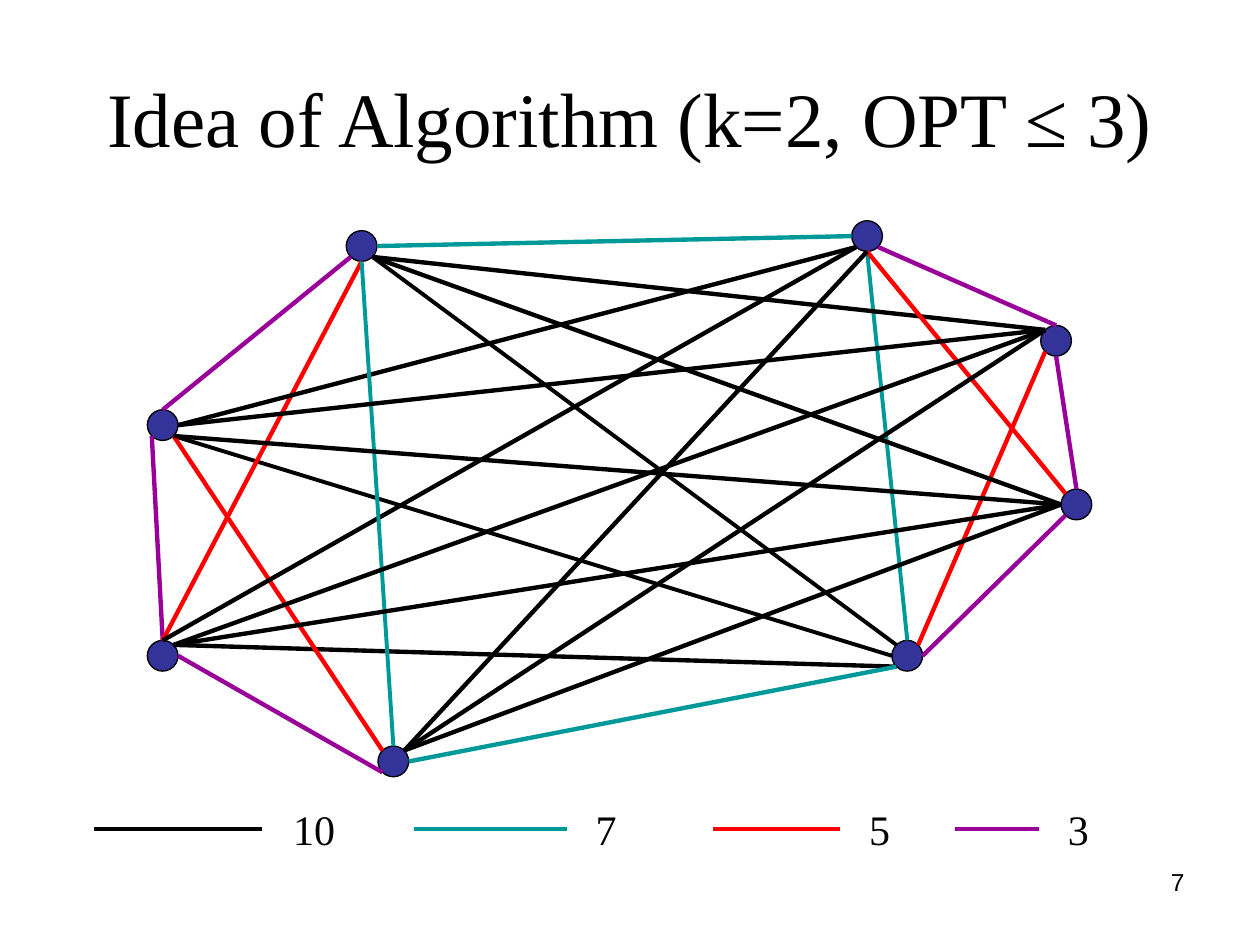
from dataclasses import dataclass
from math import sqrt

from lxml.etree import SubElement
from pptx import Presentation
from pptx.dml.color import RGBColor
from pptx.enum.shapes import MSO_CONNECTOR as Connector, MSO_SHAPE as Preset
from pptx.enum.text import MSO_ANCHOR as Anchor, MSO_AUTO_SIZE as AutoSize, PP_ALIGN as Align
from pptx.oxml.ns import qn
from pptx.util import Cm, Pt


@dataclass(frozen=True)
class Theme:
    ink: str = "000000"
    node: str = "333399"
    serif: str = "Times New Roman"
    sans: str = "Arial"
    title_size: float = 44
    label_size: float = 24
    number_size: float = 14
    node_line: float = 0.75
    edge_line: float = 2.5
    thin_line: float = 2.25


THEME = Theme()
WEIGHT_COLORS = {10: THEME.ink, 7: "009999", 5: "FF0000", 3: "990099"}

# Top left corners of the nodes, in cm from the corner of the graph
DIAMETER = 0.62
NODES = {
    "A": (4.01, 0.2), "B": (14.2, 0), "C": (18.01, 2.11), "D": (18.42, 5.41),
    "E": (15.01, 8.46), "F": (4.65, 10.59), "G": (0, 8.46), "H": (0, 3.81),
}
# Directions from a node's centre to the points where edges touch it
DIAGONAL = 1 / sqrt(2)
SITES = {
    "n": (0, -1), "s": (0, 1), "w": (-1, 0), "e": (1, 0),
    "nw": (-DIAGONAL, -DIAGONAL), "ne": (DIAGONAL, -DIAGONAL),
    "sw": (-DIAGONAL, DIAGONAL), "se": (DIAGONAL, DIAGONAL),
}
# Start, end and weight, from back to front
EDGES = [
    ("E.sw", "G.ne", 10), ("E.n", "B.s", 7), ("B.w", "A.e", 7), ("C.n", "B.se", 3),
    ("H.sw", "G.n", 3), ("E.ne", "C.sw", 5), ("A.sw", "H.n", 3), ("E.nw", "A.se", 10),
    ("E.w", "H.se", 10), ("D.n", "C.s", 3), ("E.e", "D.sw", 3), ("F.e", "E.sw", 7),
    ("G.e", "F.sw", 3), ("H.se", "F.nw", 5), ("G.n", "A.s", 5), ("H.e", "B.sw", 10),
    ("A.se", "C.nw", 10), ("B.s", "D.nw", 5), ("G.n", "B.sw", 10), ("F.ne", "B.s", 10),
    ("F.n", "A.s", 7), ("G.ne", "D.w", 10), ("H.se", "D.w", 10), ("A.se", "D.w", 10),
    ("G.ne", "C.nw", 10), ("F.ne", "C.nw", 10), ("H.e", "C.nw", 10), ("F.ne", "D.w", 10),
]
THIN_EDGES = {("E.n", "B.s"), ("E.nw", "A.se"), ("E.w", "H.se"), ("F.n", "A.s")}

# Weight, line start, line end, label left, label width, line width
LEGEND = [
    (10, 0, 3.38, 3.76, 1.35, THEME.edge_line),
    (7, 6.45, 9.53, 9.86, 0.94, THEME.thin_line),
    (5, 12.47, 15.04, 15.37, 0.94, THEME.edge_line),
    (3, 17.35, 19.05, 19.38, 0.94, THEME.edge_line),
]


def write_text(shape, text, font, size, alignment, **frame_format):
    frame = shape.text_frame
    frame.text = text
    for name, value in {"auto_size": AutoSize.NONE, **frame_format}.items():
        setattr(frame, name, value)
    paragraph = frame.paragraphs[0]
    paragraph.alignment = alignment
    run_font = paragraph.runs[0].font
    for name, value in {"name": font, "size": Pt(size)}.items():
        setattr(run_font, name, value)
    run_font.color.rgb = RGBColor.from_string(THEME.ink)


def add_line(slide, start, end, color, width):
    line = slide.shapes.add_connector(
        Connector.STRAIGHT, *(Cm(length) for length in (*start, *end)))
    line.line.color.rgb = RGBColor.from_string(color)
    line.line.width = Pt(width)
    SubElement(line._element.spPr, qn("a:effectLst"))


def place_title(slide, left, top, width, height):
    title = slide.shapes.title
    box = {"left": left, "top": top, "width": width, "height": height}
    for name, value in box.items():
        setattr(title, name, Cm(value))
    write_text(title, "Idea of Algorithm (k=2, OPT ≤ 3)", THEME.serif, THEME.title_size,
               Align.CENTER, vertical_anchor=Anchor.MIDDLE, word_wrap=True)


def add_graph(slide, left, top):
    radius = DIAMETER / 2

    def site_point(end):
        node, site = end.split(".")
        return tuple(origin + corner + radius * (1 + direction) for origin, corner, direction
                     in zip((left, top), NODES[node], SITES[site]))

    for x, y in NODES.values():
        node = slide.shapes.add_shape(
            Preset.OVAL, Cm(left + x), Cm(top + y), Cm(DIAMETER), Cm(DIAMETER))
        node.shadow.inherit = False
        node.fill.solid()
        node.fill.fore_color.rgb = RGBColor.from_string(THEME.node)
        node.line.color.rgb = RGBColor.from_string(THEME.ink)
        node.line.width = Pt(THEME.node_line)

    for start, end, weight in EDGES:
        width = THEME.thin_line if (start, end) in THIN_EDGES else THEME.edge_line
        add_line(slide, site_point(start), site_point(end), WEIGHT_COLORS[weight], width)


def add_legend(slide, left, top, height):
    middle = top + height / 2
    for weight, start, end, label_left, label_width, line_width in LEGEND:
        add_line(slide, (left + start, middle), (left + end, middle),
                 WEIGHT_COLORS[weight], line_width)
        label = slide.shapes.add_textbox(
            Cm(left + label_left), Cm(top), Cm(label_width), Cm(height))
        write_text(label, str(weight), THEME.serif, THEME.label_size, Align.LEFT,
                   word_wrap=False, auto_size=AutoSize.SHAPE_TO_FIT_TEXT)


def add_slide_number(slide, left, top, width, height):
    number = slide.shapes.add_textbox(Cm(left), Cm(top), Cm(width), Cm(height))
    write_text(number, "7", THEME.sans, THEME.number_size, Align.RIGHT, word_wrap=True)


def main():
    presentation = Presentation()
    presentation.slide_width, presentation.slide_height = Cm(25.4), Cm(19.05)
    title_only = presentation.slide_layouts.get_by_name("Title Only")
    slide = presentation.slides.add_slide(title_only)
    place_title(slide, 1.27, 0.76, 22.86, 3.18)
    add_graph(slide, 2.97, 4.45)
    add_legend(slide, 1.9, 16.08, 1.27)
    add_slide_number(slide, 18.2, 17.35, 5.93, 1.32)
    presentation.save("out.pptx")


if __name__ == "__main__":
    main()
